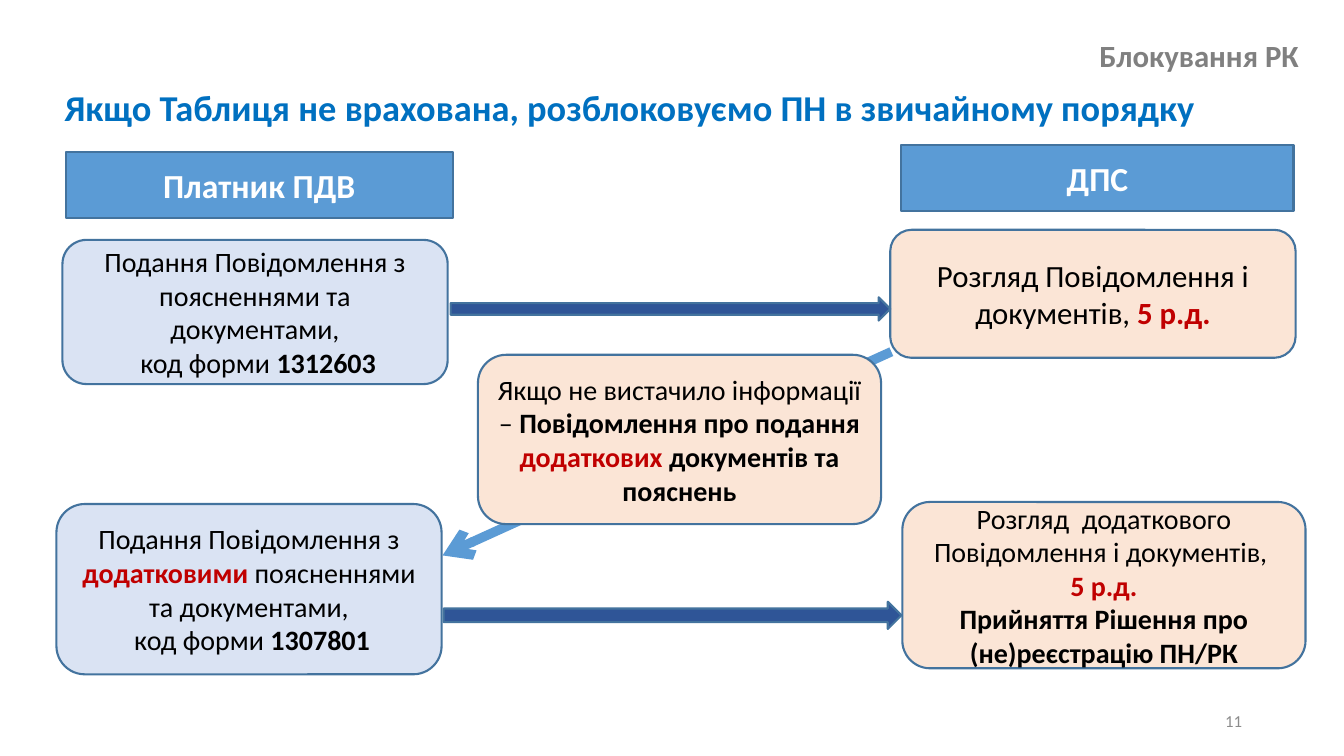
import pptx
import pptx.dml.color
import pptx.enum.shapes
import pptx.enum.text
import pptx.oxml.ns
import pptx.util
from lxml import etree

WIDTH, HEIGHT = pptx.util.Inches(13.33), pptx.util.Inches(7.5)
FONT = "Calibri"
BLUE, OUTLINE, NAVY = "5B9BD5", "43739E", "2F5597"
PAYER_FILL, OFFICE_FILL = "DAE3F3", "FBE5D6"
BLACK, WHITE, RED = "000000", "FFFFFF", "C00000"
TITLE_COLOUR, SECTION_COLOUR, NUMBER_COLOUR = "0070C0", "808080", "8C8C8C"

SHAPES = pptx.enum.shapes.MSO_SHAPE
ALIGN = pptx.enum.text.PP_ALIGN
ANCHOR = pptx.enum.text.MSO_ANCHOR

PLAIN, BOLD, ALERT = (BLACK, False), (BLACK, True), (RED, True)


def colour(hex_string):
    return pptx.dml.color.RGBColor.from_string(hex_string)


def place(left, top, width, height):
    """Turn percentages of the slide's size into lengths."""
    return (int(WIDTH * left / 100), int(HEIGHT * top / 100),
            int(WIDTH * width / 100), int(HEIGHT * height / 100))


def write(frame, paragraphs, size, align, anchor):
    """Fill a frame with paragraphs, each a list of (text, (colour, bold))."""
    frame.word_wrap = True
    frame.auto_size = pptx.enum.text.MSO_AUTO_SIZE.NONE
    frame.vertical_anchor = anchor
    frame.text = "\n".join("" for _ in paragraphs)
    for para, spans in zip(frame.paragraphs, paragraphs):
        para.alignment = align
        for text, (hex_string, bold) in spans:
            span = para.add_run()
            span.text = text
            span.font.name = FONT
            span.font.size = pptx.util.Pt(size)
            span.font.bold = bold
            span.font.color.rgb = colour(hex_string)


def add_title(page, area, text):
    title = page.shapes.title
    title.left, title.top, title.width, title.height = place(*area)
    write(title.text_frame, [[(text, (TITLE_COLOUR, True))]], 26, ALIGN.LEFT, ANCHOR.TOP)


def add_label(page, area, text, size, style, anchor):
    box = page.shapes.add_textbox(*place(*area))
    write(box.text_frame, [[(text, style)]], size, ALIGN.RIGHT, anchor)


def add_shape(page, kind, area, fill):
    shape = page.shapes.add_shape(kind, *place(*area))
    shape.shadow.inherit = False
    shape.fill.solid()
    shape.fill.fore_color.rgb = colour(fill)
    shape.line.color.rgb = colour(OUTLINE)
    shape.line.width = pptx.util.Pt(1.5)
    return shape


def add_heading(page, area, text):
    box = add_shape(page, SHAPES.RECTANGLE, area, BLUE)
    write(box.text_frame, [[(text, (WHITE, True))]], 24, ALIGN.CENTER, ANCHOR.MIDDLE)


def add_step(page, area, fill, paragraphs, size=20):
    box = add_shape(page, SHAPES.ROUNDED_RECTANGLE, area, fill)
    write(box.text_frame, paragraphs, size, ALIGN.CENTER, ANCHOR.MIDDLE)


def add_return_arrow(page, start, end):
    left, top, right, bottom = place(*start, *end)
    line = page.shapes.add_connector(
        pptx.enum.shapes.MSO_CONNECTOR.STRAIGHT, left, top, right, bottom)
    line.line.color.rgb = colour(BLUE)
    line.line.width = pptx.util.Pt(6.75)
    qn = pptx.oxml.ns.qn
    etree.SubElement(line.line._get_or_add_ln(), qn("a:tailEnd"), type="arrow")
    etree.SubElement(line._element.spPr, qn("a:effectLst"))


def main():
    deck = pptx.Presentation()
    deck.slide_width, deck.slide_height = WIDTH, HEIGHT
    page = deck.slides.add_slide(deck.slide_layouts[5])

    add_label(page, (70.67, 92.67, 22.5, 5.33), "11", 12, (NUMBER_COLOUR, False), ANCHOR.MIDDLE)
    add_title(page, (4.05, 10.53, 93.55, 7.2),
              "Якщо Таблиця не врахована, розблоковуємо ПН в звичайному порядку")
    add_label(page, (80.8, 4.27, 16.58, 6.27), "Блокування РК", 22,
              (SECTION_COLOUR, True), ANCHOR.TOP)

    add_heading(page, (4.88, 20.13, 28.81, 8.67), "Платник ПДВ")
    add_heading(page, (67.07, 19.2, 29.18, 8.67), "ДПС")

    add_step(page, (4.65, 31.73, 28.66, 19.07), PAYER_FILL, [
        [("Подання Повідомлення з поясненнями та документами,", PLAIN)],
        [(" код форми ", PLAIN), ("1312603", BOLD)]])
    add_step(page, (4.2, 66.67, 28.66, 22.53), PAYER_FILL, [
        [("Подання Повідомлення з ", PLAIN), ("додатковими", ALERT),
         (" поясненнями та документами,", PLAIN)],
        [(" код форми ", PLAIN), ("1307801", BOLD)]])
    add_step(page, (67.14, 66.4, 30, 22), OFFICE_FILL, [
        [("Розгляд  додаткового Повідомлення і документів, ", PLAIN)],
        [("5 р.д.", ALERT)],
        [("Прийняття Рішення про (не)реєстрацію ПН/РК", BOLD)]])
    add_step(page, (66.24, 30.4, 30.16, 16.93), OFFICE_FILL, [
        [("Розгляд Повідомлення і документів, ", PLAIN), ("5 р.д.", ALERT)]], size=22)

    for area in ((33.01, 79.6, 34.06, 3.6), (33.53, 39.33, 32.71, 3.07)):
        add_shape(page, SHAPES.RIGHT_ARROW, area, NAVY)
    add_return_arrow(page, (66.32, 46.53), (32.93, 73.47))

    add_step(page, (35.56, 46.93, 30, 22.4), OFFICE_FILL, [
        [("Якщо не вистачило інформації – ", PLAIN), ("Повідомлення про подання ", BOLD),
         ("додаткових ", ALERT), ("документів та пояснень", BOLD)]])

    deck.save("out.pptx")


if __name__ == "__main__":
    main()
